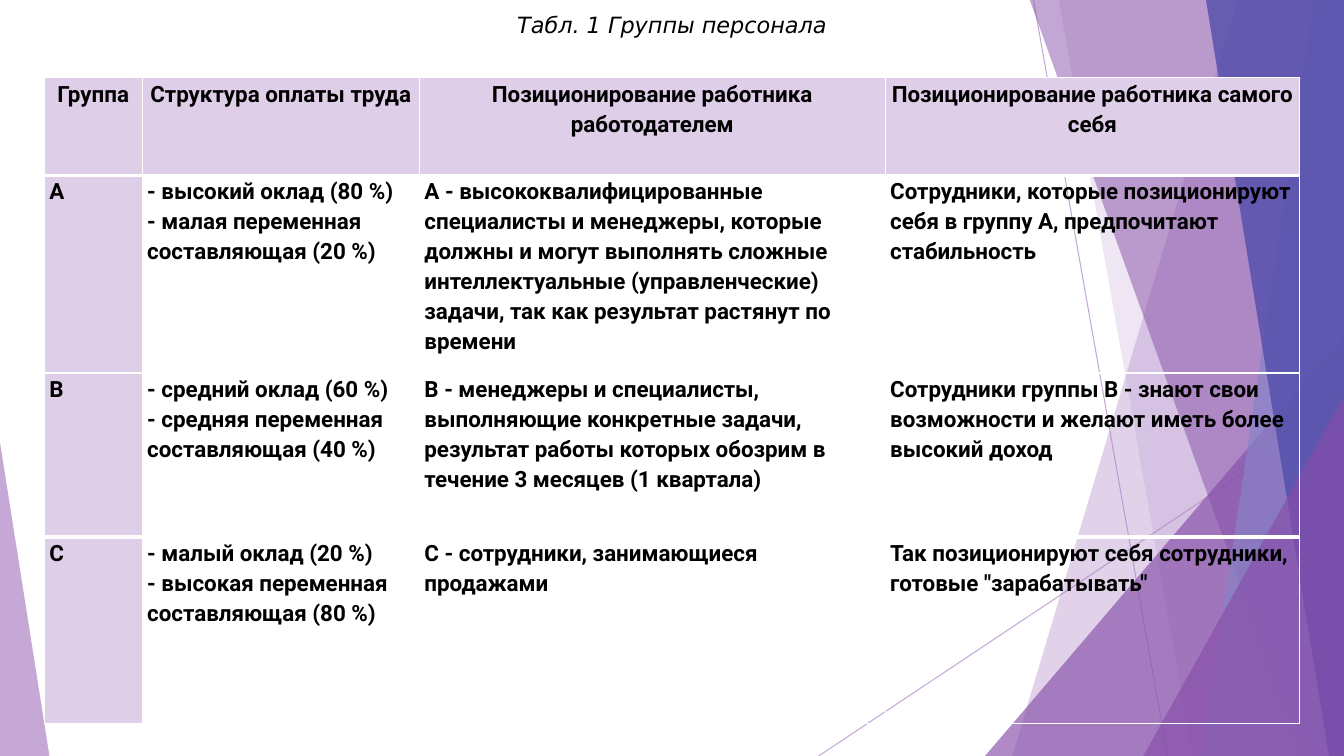
from lxml import etree
from pptx import Presentation
from pptx.dml.color import RGBColor
from pptx.enum.shapes import MSO_CONNECTOR, MSO_SHAPE
from pptx.enum.text import MSO_ANCHOR, PP_ALIGN
from pptx.oxml.ns import qn
from pptx.util import Inches, Pt

COLORS = {
    "lilac": "AD84C6", "purple": "874EA9", "periwinkle": "8784C7",
    "indigo": "524EAB", "pale": "DECEE8", "white": "FFFFFF", "black": "000000",
}
WIDTH, HEIGHT = 13.33, 7.5


def paint(fill, color, opacity=100):
    """Make a fill solid, with opacity in percent."""
    fill.solid()
    fill.fore_color.rgb = RGBColor.from_string(COLORS[color])
    if opacity < 100:
        tone = fill._xPr.find(".//" + qn("a:srgbClr"))
        etree.SubElement(tone, qn("a:alpha")).set("val", str(opacity * 1000))


def style_text(paragraph, font_name, align):
    paragraph.alignment = align
    font = paragraph.runs[0].font
    font.name, font.size = font_name, Pt(16)
    font.color.rgb = RGBColor.from_string(COLORS["black"])
    return font


prs = Presentation()
prs.slide_width, prs.slide_height = Inches(WIDTH), Inches(HEIGHT)
slide = prs.slides.add_slide(prs.slide_layouts[6])
shapes = slide.shapes

# Thin crossing lines
for x1, y1, x2, y2 in [(10.25, 0, 11.58, HEIGHT), (WIDTH, 4.03, 8.12, HEIGHT)]:
    ray = shapes.add_connector(
        MSO_CONNECTOR.STRAIGHT, Inches(x1), Inches(y1), Inches(x2), Inches(y2))
    ray.line.width = Pt(0.75)
    paint(ray.line.fill, "lilac", 70)
    etree.SubElement(ray._element.spPr, qn("a:effectLst"))

# Translucent facets: bands run from (top x, bottom x) to the right edge,
# triangles are (left, top, width, apex position) and stand on the bottom edge
facets = [
    ("band", (12.28, 10.04), "lilac", 36),
    ("band", (10.5, 11.83), "lilac", 20),
    ("triangle", (9.77, 3.33, 3.56, 1), "purple", 66),
    ("band", (10.21, 12.91), "purple", 50),
    ("band", (13.03, 11.92), "periwinkle", 70),
    ("band", (11.96, 13.18), "indigo", 80),
    ("triangle", (11.34, 3.93, 1.99, 1), "purple", 66),
    ("triangle", (0, 4.39, 0.49, 0), "lilac", 70),
]
for kind, place, color, opacity in facets:
    if kind == "band":
        top_x, bottom_x = place
        outline = shapes.build_freeform(Inches(top_x), Inches(-0.01))
        outline.add_line_segments([
            (Inches(x), Inches(y)) for x, y in
            [(WIDTH, -0.01), (WIDTH, HEIGHT), (bottom_x, HEIGHT)]])
        facet = outline.convert_to_shape()
    else:
        left, top, width, apex = place
        facet = shapes.add_shape(
            MSO_SHAPE.ISOSCELES_TRIANGLE,
            Inches(left), Inches(top), Inches(width), Inches(HEIGHT - top))
        facet.adjustments[0] = apex
    paint(facet.fill, color, opacity)
    facet.line.fill.background()
    facet.shadow.inherit = False

# Staff groups table
groups = [
    ["Группа", "Структура оплаты труда",
     "Позиционирование работника работодателем",
     "Позиционирование работника самого себя"],
    ["А", "- высокий оклад (80 %)\n- малая переменная составляющая (20 %)",
     "А - высококвалифицированные специалисты и менеджеры, которые должны и "
     "могут выполнять сложные интеллектуальные (управленческие) задачи, "
     "так как результат растянут по времени",
     "Сотрудники, которые позиционируют себя в группу А, предпочитают стабильность"],
    ["B", "- средний оклад (60 %)\n- средняя переменная составляющая (40 %)",
     "В - менеджеры и специалисты, выполняющие конкретные задачи, результат "
     "работы которых обозрим в течение 3 месяцев (1 квартала)",
     "Сотрудники группы В - знают свои возможности и желают иметь более высокий доход"],
    ["C", "- малый оклад (20 %)\n- высокая переменная составляющая (80 %)",
     "С - сотрудники, занимающиеся продажами",
     'Так позиционируют себя сотрудники, готовые "зарабатывать"'],
]
column_widths = [0.97, 2.75, 4.62, 4.11]
row_heights = [0.97, 1.96, 1.63, 1.85]
table = shapes.add_table(
    len(groups), len(column_widths), Inches(0.44), Inches(0.77),
    Inches(sum(column_widths)), Inches(sum(row_heights))).table
table.first_row = table.horz_banding = False
for column, width in zip(table.columns, column_widths):
    column.width = Inches(width)
for row, height in zip(table.rows, row_heights):
    row.height = Inches(height)

last = len(groups) - 1
for r, texts in enumerate(groups):
    for c, text in enumerate(texts):
        cell = table.cell(r, c)
        cell.margin_left = cell.margin_right = Inches(0.05)
        cell.margin_top = cell.margin_bottom = 0
        cell.text_frame.text = text
        align = PP_ALIGN.CENTER if r == 0 else PP_ALIGN.JUSTIFY if c == 0 else PP_ALIGN.LEFT
        for paragraph in cell.text_frame.paragraphs:
            paragraph.line_spacing = 1.15
            style_text(paragraph, "Roboto", align).bold = True

        # The header and the last row are set off by thicker rules
        above = 3 if r in (1, last) else 1
        below = 3 if r in (0, last - 1) else 1
        properties = cell._tc.get_or_add_tcPr()
        for side, points in [("L", 1), ("R", 1), ("T", above), ("B", below)]:
            border = etree.SubElement(properties, qn("a:ln" + side), w=str(Pt(points)))
            solid = etree.SubElement(border, qn("a:solidFill"))
            etree.SubElement(solid, qn("a:srgbClr"), val=COLORS["white"])
        if r == 0 or c == 0:
            paint(cell.fill, "pale")
        else:
            cell.fill.background()

# Caption
caption = shapes.add_textbox(Inches(4.97), Inches(0.06), Inches(3.39), Inches(0.37))
paint(caption.fill, "white")
caption.text_frame.word_wrap = False
caption.text_frame.vertical_anchor = MSO_ANCHOR.MIDDLE
caption.text_frame.text = "Табл. 1 Группы персонала"
style_text(caption.text_frame.paragraphs[0], "DejaVu Sans", PP_ALIGN.CENTER).italic = True

prs.save("out.pptx")
